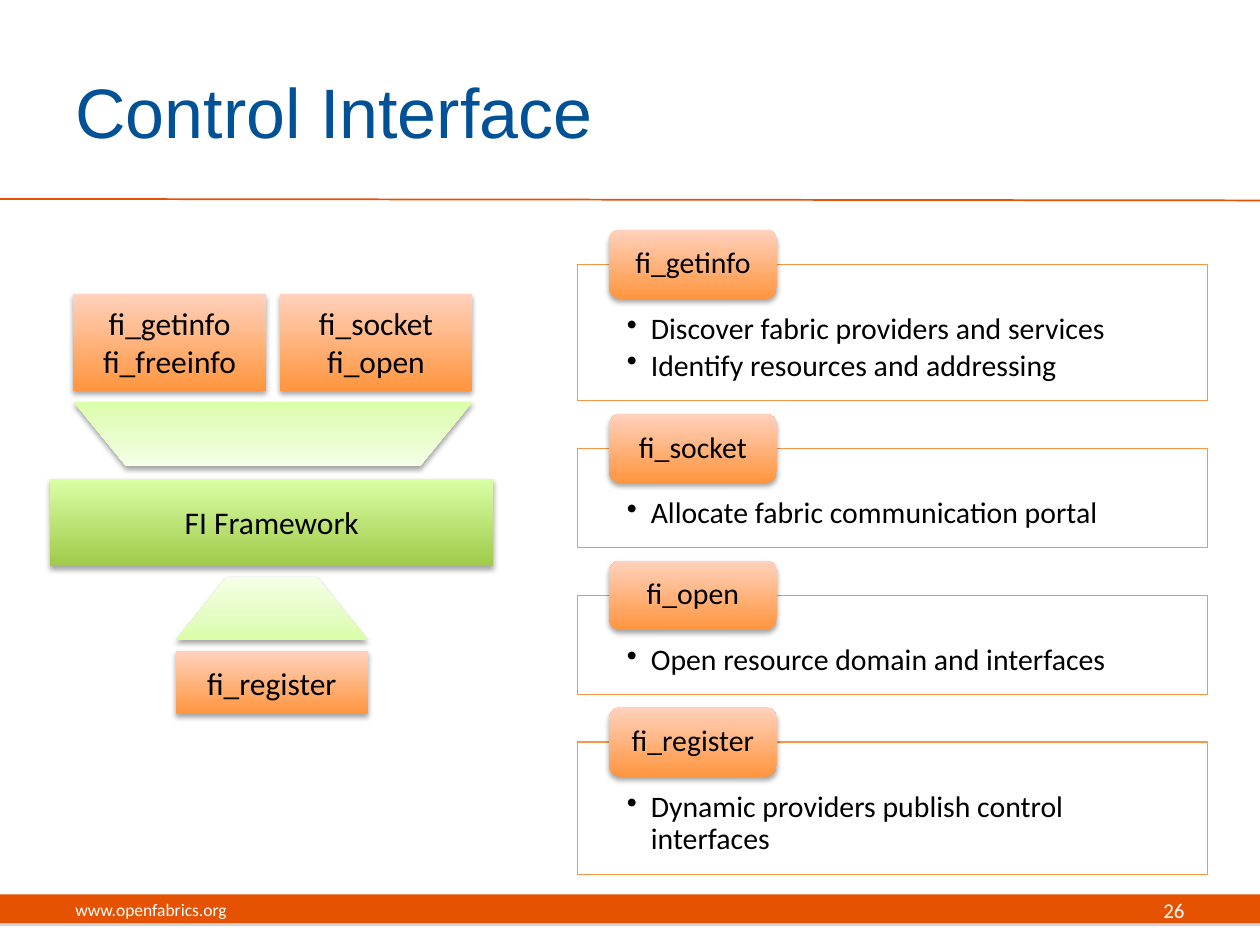
"""Build the Control Interface slide."""
from dataclasses import dataclass

from lxml.etree import SubElement
from pptx import Presentation
from pptx.dml.color import RGBColor
from pptx.enum.shapes import MSO_CONNECTOR as Link, MSO_SHAPE as Kind
from pptx.enum.text import MSO_ANCHOR as Anchor, PP_ALIGN as Align
from pptx.oxml.ns import qn
from pptx.util import Cm, Pt

BLACK, WHITE, BLUE, RUST, AMBER = "000000", "FFFFFF", "005195", "E55302", "F79646"
ORANGE = ((0, "FF953E"), (100, "FFD2BD"))
GREEN = ((0, "A0CA4A"), (100, "DAFFA5"))
PALE = ((0, "DAFDA7"), (35, "E4FCC2"), (100, "F5FFE7"))
GAP = 0.96


@dataclass
class Box:
    left: float
    top: float
    width: float
    height: float

    def place(self) -> tuple:
        return tuple(Cm(v) for v in (self.left, self.top, self.width, self.height))


@dataclass
class Block:
    box: Box
    stops: tuple
    text: str = ""
    kind: Kind = Kind.RECTANGLE
    flip: bool = False


@dataclass
class Panel:
    name: str
    height: float
    items: tuple


@dataclass
class Label:
    text: str
    box: Box
    size: int
    tint: str
    face: str = "Calibri"
    align: Align = Align.LEFT


def rgb(tint: str) -> RGBColor:
    return RGBColor.from_string(tint)


def shade(shape, stops: tuple) -> None:
    shape.fill.gradient()
    shape.fill.gradient_angle = 90
    ramp = shape._element.spPr.find(qn("a:gradFill")).find(qn("a:gsLst"))
    for old in list(ramp):
        ramp.remove(old)
    for pos, tint in stops:
        stop = SubElement(ramp, qn("a:gs"), pos=str(pos * 1000))
        SubElement(stop, qn("a:srgbClr"), val=tint)


def cast(shape, tint: str, blur: float) -> None:
    effect = shape._element.spPr.find(qn("a:effectLst"))
    drop = SubElement(effect, qn("a:outerShdw"), blurRad=str(Pt(blur)),
                      dist=str(Pt(1.8)), dir="5400000", rotWithShape="0")
    hue = SubElement(drop, qn("a:srgbClr"), val=tint)
    SubElement(hue, qn("a:alpha"), val="35000")


def style(para, size: int, tint: str, align: Align, face: str = "Calibri") -> None:
    para.alignment = align
    para.font.size = Pt(size)
    para.font.name = face
    para.font.color.rgb = rgb(tint)


def add_shape(slide, kind: Kind, box: Box):
    shape = slide.shapes.add_shape(kind, *box.place())
    shape.shadow.inherit = False
    shape.line.fill.background()
    return shape


def add_block(slide, block: Block, size: int = 18):
    shape = add_shape(slide, block.kind, block.box)
    shade(shape, block.stops)
    cast(shape, BLACK, 3.1)
    if block.kind == Kind.TRAPEZOID:
        shape.adjustments[0] = 0.82
    if block.flip:
        shape._element.spPr.xfrm.set("flipV", "1")
    if block.text:
        frame = shape.text_frame
        frame.text = block.text
        frame.vertical_anchor = Anchor.MIDDLE
        style(frame.paragraphs[0], size, BLACK, Align.CENTER)
    return shape


def add_panel(slide, panel: Panel, top: float) -> None:
    shape = add_shape(slide, Kind.RECTANGLE, Box(11.64, top, 12.7, panel.height))
    shape.fill.solid()
    shape.fill.fore_color.rgb = rgb(WHITE)
    hue = shape._element.spPr.find(qn("a:solidFill"))[0]
    SubElement(hue, qn("a:alpha"), val="90000")
    shape.line.color.rgb = rgb(AMBER)
    shape.line.width = Pt(0.75)
    frame = shape.text_frame
    frame.text = "\n".join(panel.items)
    frame.vertical_anchor = Anchor.TOP
    frame.margin_left = frame.margin_right = frame.margin_top = Cm(1)
    frame.margin_bottom = Cm(0.32)
    for para in frame.paragraphs:
        props = para._p.get_or_add_pPr()
        props.set("marL", str(Cm(0.48)))
        props.set("indent", str(-Cm(0.48)))
        SubElement(props, qn("a:buChar"), char="•")
        para.line_spacing = 0.9
        para.space_after = Pt(2.5)
        style(para, 17, BLACK, Align.LEFT)
    tab = add_block(slide, Block(Box(12.28, top - 0.7, 3.38, 1.4), ORANGE,
                                 panel.name, Kind.ROUNDED_RECTANGLE), 17)
    tab.text_frame.paragraphs[0].line_spacing = 0.9
    tab.text_frame.margin_top = tab.text_frame.margin_bottom = 0


def add_label(slide, label: Label) -> None:
    frame = slide.shapes.add_textbox(*label.box.place()).text_frame
    frame.word_wrap = True
    frame.vertical_anchor = Anchor.MIDDLE
    frame.text = label.text
    style(frame.paragraphs[0], label.size, label.tint, label.align, label.face)


def add_frame(slide) -> None:
    bar = add_shape(slide, Kind.RECTANGLE, Box(0, 18.03, 25.4, 0.58))
    bar.fill.solid()
    bar.fill.fore_color.rgb = rgb(RUST)
    cast(bar, "808080", 0)
    rule = slide.shapes.add_connector(Link.STRAIGHT, 0, Cm(4.01), Cm(25.4), Cm(4.04))
    rule.line.color.rgb = rgb(RUST)
    rule.line.width = Pt(1)
    SubElement(rule._element.spPr, qn("a:effectLst"))


LABELS = (
    Label("Control Interface", Box(1.27, 0.64, 20.75, 3.18), 40, BLUE, "Arial"),
    Label("www.openfabrics.org", Box(1.27, 17.83, 8.05, 1.02), 10, WHITE),
    Label("26", Box(18.2, 17.83, 5.93, 1.02), 12, WHITE, align=Align.RIGHT),
)
PANELS = (
    Panel("fi_getinfo", 2.75, ("Discover fabric providers and services",
                               "Identify resources and addressing")),
    Panel("fi_socket", 2, ("Allocate fabric communication portal",)),
    Panel("fi_open", 2, ("Open resource domain and interfaces",)),
    Panel("fi_register", 2.67, ("Dynamic providers publish control interfaces",)),
)
BLOCKS = (
    Block(Box(1.01, 9.65, 8.94, 1.76), GREEN, "FI Framework"),
    Block(Box(1.48, 8.1, 8.05, 1.3), PALE, kind=Kind.TRAPEZOID, flip=True),
    Block(Box(3.54, 11.63, 3.88, 1.27), PALE, kind=Kind.TRAPEZOID),
    Block(Box(1.48, 5.92, 3.88, 1.96), ORANGE, "fi_getinfo\vfi_freeinfo"),
    Block(Box(5.64, 5.92, 3.88, 1.96), ORANGE, "fi_socket\vfi_open"),
    Block(Box(3.54, 13.13, 3.88, 1.27), ORANGE, "fi_register"),
)


def main() -> None:
    deck = Presentation()
    deck.slide_width, deck.slide_height = Cm(25.4), Cm(19.05)
    slide = deck.slides.add_slide(deck.slide_layouts[6])
    add_frame(slide)
    for label in LABELS:
        add_label(slide, label)
    top = 5.33
    for panel in PANELS:
        add_panel(slide, panel, top)
        top += panel.height + GAP
    for block in BLOCKS:
        add_block(slide, block)
    deck.save("out.pptx")


if __name__ == "__main__":
    main()
